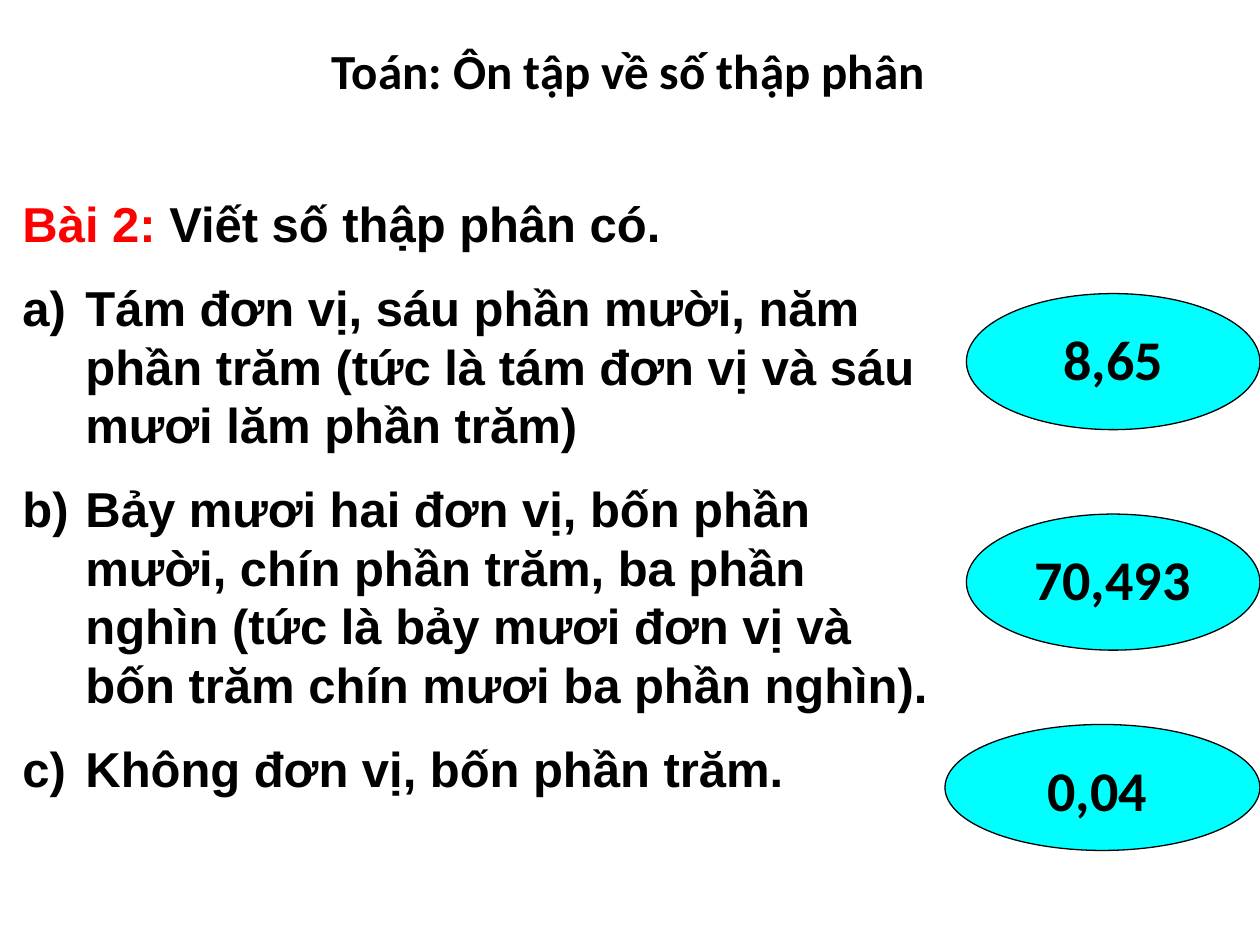
import pptx
import pptx.dml.color
import pptx.enum.shapes
import pptx.enum.text
import pptx.util
from lxml import etree
from pptx.util import Inches, Pt

COLORS = {"text": "000000", "heading": "FF0000", "answer": "00FFFF"}
A_NS = "http://schemas.openxmlformats.org/drawingml/2006/main"
TITLE = "Toán: Ôn tập về số thập phân"
HEADING = ("Bài 2: ", "Viết số thập phân có.")
QUESTIONS = [
    "Tám đơn vị, sáu phần mười, năm phần trăm (tức là tám đơn vị và sáu mươi lăm phần trăm)",
    "Bảy mươi hai đơn vị, bốn phần mười, chín phần trăm, ba phần nghìn "
    "(tức là bảy mươi đơn vị và bốn trăm chín mươi ba phần nghìn).",
    "Không đơn vị, bốn phần trăm.",
]
# answer, ellipse box, label box (left, top, width, height)
ANSWERS = [
    ("0,04", (7.5, 5.75, 2.5, 1), (8, 5.95, 1.42, 0.63)),
    ("70,493", (7.67, 4.08, 2.33, 1.08), (7.83, 4.27, 2, 0.63)),
    ("8,65", (7.67, 2.33, 2.33, 1.08), (8.17, 2.53, 1.33, 0.63)),
]


def rgb(name):
    return pptx.dml.color.RGBColor.from_string(COLORS[name])


def inches(box):
    return [Inches(value) for value in box]


def style(paragraph, font_name, size):
    paragraph.font.name = font_name
    paragraph.font.size = Pt(size)
    paragraph.font.bold = True
    paragraph.font.color.rgb = rgb("text")


def add_title(slide):
    title = slide.shapes.title
    title.left, title.top, title.width, title.height = inches((1.57, 0.27, 6.83, 0.57))
    frame = title.text_frame
    frame.text = TITLE
    frame.auto_size = pptx.enum.text.MSO_AUTO_SIZE.NONE
    frame.vertical_anchor = pptx.enum.text.MSO_ANCHOR.TOP
    frame.paragraphs[0].alignment = pptx.enum.text.PP_ALIGN.CENTER
    style(frame.paragraphs[0], "Calibri", 28)


def add_text_frame(slide, box):
    frame = slide.shapes.add_textbox(*inches(box)).text_frame
    frame.word_wrap = True
    return frame


def hang(paragraph, lettered):
    """Give a hanging indent, with an a), b), c) number if lettered."""
    properties = paragraph._p.get_or_add_pPr()
    properties.set("marL", str(Inches(0.5)))
    properties.set("indent", str(-Inches(0.5)))
    if lettered:
        paragraph.space_before = Pt(14)
        etree.SubElement(properties, f"{{{A_NS}}}buAutoNum", type="alphaLcParenR")
    style(paragraph, "Arial", 28)


def add_exercise(slide):
    frame = add_text_frame(slide, (0.08, 1.49, 7.42, 5.01))
    heading = frame.paragraphs[0]
    hang(heading, lettered=False)
    for text, color in zip(HEADING, ("heading", "text")):
        run = heading.add_run()
        run.text = text
        run.font.color.rgb = rgb(color)
    for text in QUESTIONS:
        question = frame.add_paragraph()
        question.text = text
        hang(question, lettered=True)


def add_answer(slide, text, ellipse_box, label_box):
    ellipse = slide.shapes.add_shape(
        pptx.enum.shapes.MSO_SHAPE.OVAL, *inches(ellipse_box))
    ellipse.shadow.inherit = False
    ellipse.fill.solid()
    ellipse.fill.fore_color.rgb = rgb("answer")
    ellipse.line.color.rgb = rgb("text")
    ellipse.line.width = Pt(0.75)
    label = add_text_frame(slide, label_box).paragraphs[0]
    label.text = text
    label.alignment = pptx.enum.text.PP_ALIGN.CENTER
    style(label, "Calibri", 32)


def main():
    deck = pptx.Presentation()
    deck.slide_width, deck.slide_height = Inches(10), Inches(7.5)
    slide = deck.slides.add_slide(deck.slide_layouts[5])
    add_title(slide)
    add_exercise(slide)
    for answer in ANSWERS:
        add_answer(slide, *answer)
    deck.save("out.pptx")


if __name__ == "__main__":
    main()
